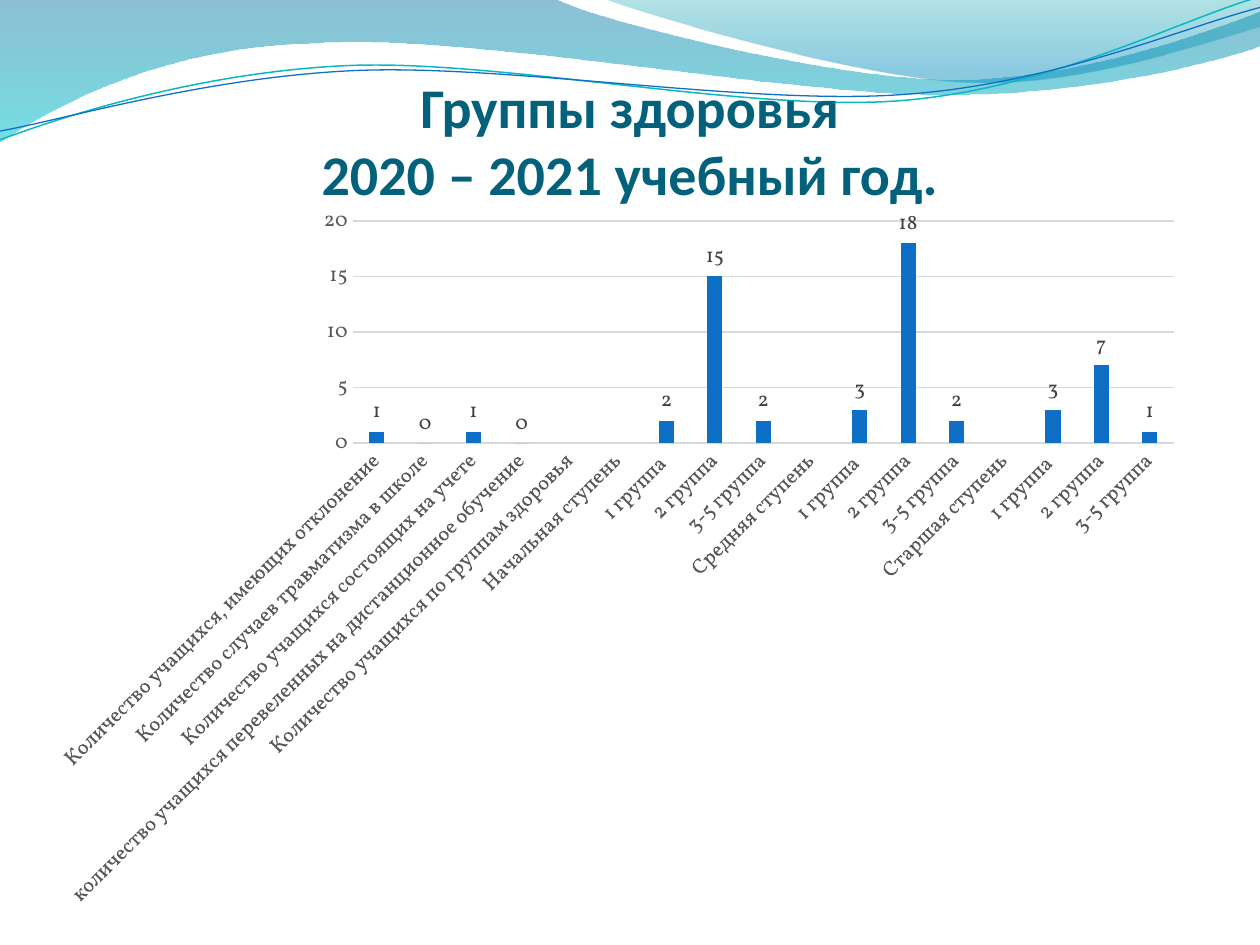
from math import cos, radians, sin

from lxml.etree import SubElement
from pptx import Presentation
from pptx.chart.data import CategoryChartData
from pptx.dml.color import RGBColor
from pptx.enum.chart import XL_CHART_TYPE, XL_LABEL_POSITION, XL_TICK_MARK
from pptx.enum.text import MSO_ANCHOR, MSO_AUTO_SIZE, PP_ALIGN
from pptx.oxml.ns import qn
from pptx.util import Inches, Pt

COLUMNS, ROWS = 10, 7.5  # slide grid, one inch per cell
CURVE_TILT = -2.7  # degrees

TITLE_TEAL = RGBColor(0x04, 0x61, 0x7B)
BLUE = RGBColor(0x0F, 0x6F, 0xC6)
TURQUOISE = RGBColor(0x0A, 0xB8, 0xBF)
DEEP_BLUE = RGBColor(0x00, 0x74, 0xA1)
AQUA = RGBColor(0x00, 0xC6, 0xCF)
SEA_GREEN = RGBColor(0x00, 0xA1, 0xA9)
SKY_BLUE = RGBColor(0x00, 0x8B, 0xBF)
GRID_GREY = RGBColor(0xD9, 0xD9, 0xD9)
AXIS_GREY = RGBColor(0x59, 0x59, 0x59)
LABEL_GREY = RGBColor(0x40, 0x40, 0x40)

# Outlines: a pair is a line's end, six numbers are a Bezier curve
LEFT_WAVE = [(0, 0), (4.4, -0.01), (4.76, 0.17, 6.64, 0.63, 7.58, 0.63),
             (8.53, 0.63, 9.58, 0.26, 10, 0.09), (10.01, 0.36),
             (9.83, 0.44, 8.7, 0.76, 7.46, 0.75),
             (6.22, 0.75, 3.82, 0.28, 2.57, 0.34),
             (1.29, 0.36, 0.46, 0.83, -0.01, 1.13), (0, 0)]
RIGHT_WAVE = [(4.79, -0.01), (5.09, 0.11, 6.82, 0.62, 7.69, 0.65),
              (8.56, 0.69, 9.61, 0.32, 10, 0.21), (10, 0), (4.79, -0.01)]
TURQUOISE_CURVE = [(0, 1.11), (0.48, 0.93, 1.58, 0.57, 2.77, 0.52),
                   (3.95, 0.47, 5.93, 0.89, 7.13, 0.8),
                   (8.33, 0.71, 9.38, 0.15, 9.98, -0.02)]
BLUE_CURVE = [(0, 1.04), (0.47, 0.96, 1.64, 0.61, 2.83, 0.56),
              (4.03, 0.51, 5.97, 0.84, 7.17, 0.75),
              (8.36, 0.67, 9.41, 0.21, 10, 0.06)]

# Chart data: general counts, then three health groups for each school stage
GENERAL = [("Количество учащихся, имеющих отклонение", 1),
           ("Количество случаев травматизма в школе", 0),
           ("Количество учащихся состоящих на учете", 1),
           ("количество учащихся перевеленных на дистанционное обучение", 0),
           ("Количество учащихся по группам здоровья", None)]
GROUPS = ["1 группа ", "2 группа", "3-5 группа"]
STAGES = {"Начальная ступень": (2, 15, 2),
          "Средняя ступень": (3, 18, 2),
          "Старшая ступень": (3, 7, 1)}


def turn(point, center, degrees):
    """Turn a point clockwise around a center."""
    dx, dy = point[0] - center[0], point[1] - center[1]
    c, s = cos(radians(degrees)), sin(radians(degrees))
    return center[0] + dx * c - dy * s, center[1] + dx * s + dy * c


class SlideBuilder:
    title_font = "Calibri"
    chart_font = "Vollkorn"

    def __init__(self, deck):
        self.page = deck.slides.add_slide(deck.slide_layouts[5])

    def outline(self, steps, close, tilt=0, center=(0, 0)):
        """Freeform whose triples of points become Bezier curves."""
        points = [turn(step[i:i + 2], center, -tilt)
                  for step in steps for i in range(0, len(step), 2)]
        points = [(Inches(x), Inches(y)) for x, y in points]
        builder = self.page.shapes.build_freeform(*points[0])
        builder.add_line_segments(points[1:], close=close)
        shape = builder.convert_to_shape()
        shape.shadow.inherit = False
        shape.rotation = tilt
        lines = iter(list(shape._element.iter(qn("a:lnTo"))))
        for step in steps[1:]:
            first = next(lines)
            if len(step) == 6:
                first.tag = qn("a:cubicBezTo")
                for line in (next(lines), next(lines)):
                    first.append(line[0])
                    line.getparent().remove(line)
        return shape

    def wave(self, steps, stops):
        """Filled wave; each stop is position, colour and opacity in percent."""
        shape = self.outline(steps, True)
        shape.line.fill.background()
        shape.fill.gradient()
        gradient = shape._element.spPr.find(qn("a:gradFill"))
        for child in list(gradient):
            gradient.remove(child)
        stop_list = SubElement(gradient, qn("a:gsLst"))
        for position, color, opacity in stops:
            stop = SubElement(stop_list, qn("a:gs"), pos=str(position * 1000))
            paint = SubElement(stop, qn("a:srgbClr"), val=str(color))
            SubElement(paint, qn("a:alpha"), val=str(opacity * 1000))
        SubElement(gradient, qn("a:lin"), ang="5400000", scaled="0")

    def curve(self, steps, color, width, center):
        shape = self.outline(steps, False, CURVE_TILT, center)
        shape.fill.background()
        shape.line.color.rgb = color
        shape.line.width = Pt(width)

    def title(self, text, left, top, width, height):
        box = self.page.shapes.title
        box.left, box.top, box.width, box.height = map(Inches, (left, top, width, height))
        frame = box.text_frame
        frame.text = text
        frame.auto_size = MSO_AUTO_SIZE.NONE
        frame.word_wrap = True
        frame.vertical_anchor = MSO_ANCHOR.BOTTOM
        frame.margin_left = frame.margin_right = frame.margin_bottom = 0
        frame.margin_top = Inches(0.05)
        para = frame.paragraphs[0]
        para.alignment = PP_ALIGN.CENTER
        for span in para.runs:
            self.style_font(span.font, 32, TITLE_TEAL, self.title_font)
            span.font.bold = True
        box._element.getparent().append(box._element)  # in front of the waves

    def style_font(self, font, size, color, name):
        font.size, font.name = Pt(size), name
        font.color.rgb = color

    def style_axis(self, axis):
        axis.major_tick_mark = axis.minor_tick_mark = XL_TICK_MARK.NONE
        self.style_font(axis.tick_labels.font, 12, AXIS_GREY, self.chart_font)

    def column_chart(self, rows, left, top, width, height):
        data = CategoryChartData()
        data.categories = [name for name, _ in rows]
        data.add_series("Series 1", [value for _, value in rows])
        chart = self.page.shapes.add_chart(
            XL_CHART_TYPE.COLUMN_CLUSTERED,
            *map(Inches, (left, top, width, height)), data).chart
        chart.has_title = chart.has_legend = False
        self.style_font(chart.font, 10, RGBColor(0, 0, 0), self.chart_font)

        # Axes
        names, values = chart.category_axis, chart.value_axis
        self.style_axis(names)
        self.style_axis(values)
        names.format.line.color.rgb = GRID_GREY
        names.format.line.width = Pt(0.75)
        body = names._element.find(qn("c:txPr")).find(qn("a:bodyPr"))
        body.set("rot", "-2700000")
        values.format.line.fill.background()
        values.major_gridlines.format.line.color.rgb = GRID_GREY
        values.major_gridlines.format.line.width = Pt(0.75)

        # Columns and their labels
        plot = chart.plots[0]
        plot.gap_width, plot.overlap, plot.vary_by_categories = 219, -27, False
        fill = plot.series[0].format.fill
        fill.solid()
        fill.fore_color.rgb = BLUE
        labels = plot.series[0].data_labels
        labels.show_value = True
        labels.position = XL_LABEL_POSITION.OUTSIDE_END
        self.style_font(labels.font, 12, LABEL_GREY, self.chart_font)


def main():
    deck = Presentation()
    deck.slide_width, deck.slide_height = Inches(COLUMNS), Inches(ROWS)
    slide = SlideBuilder(deck)

    # Wave decoration
    slide.wave(LEFT_WAVE, [(0, DEEP_BLUE, 45), (100, AQUA, 55)])
    slide.wave(RIGHT_WAVE, [(0, SEA_GREEN, 30), (80, SKY_BLUE, 45)])
    slide.curve(TURQUOISE_CURVE, TURQUOISE, 0.85, (4.99, 0.58))
    slide.curve(BLUE_CURVE, BLUE, 0.75, (5, 0.59))

    # Title and chart
    slide.title("Группы здоровья\v2020 – 2021 учебный год.", 0.5, 0.77, COLUMNS - 1, 0.87)
    rows = list(GENERAL)
    for stage, counts in STAGES.items():
        rows += [(stage, None), *zip(GROUPS, counts)]
    slide.column_chart(rows, 0.28, 1.64, 9.22, 5.57)
    deck.save("out.pptx")


if __name__ == "__main__":
    main()
